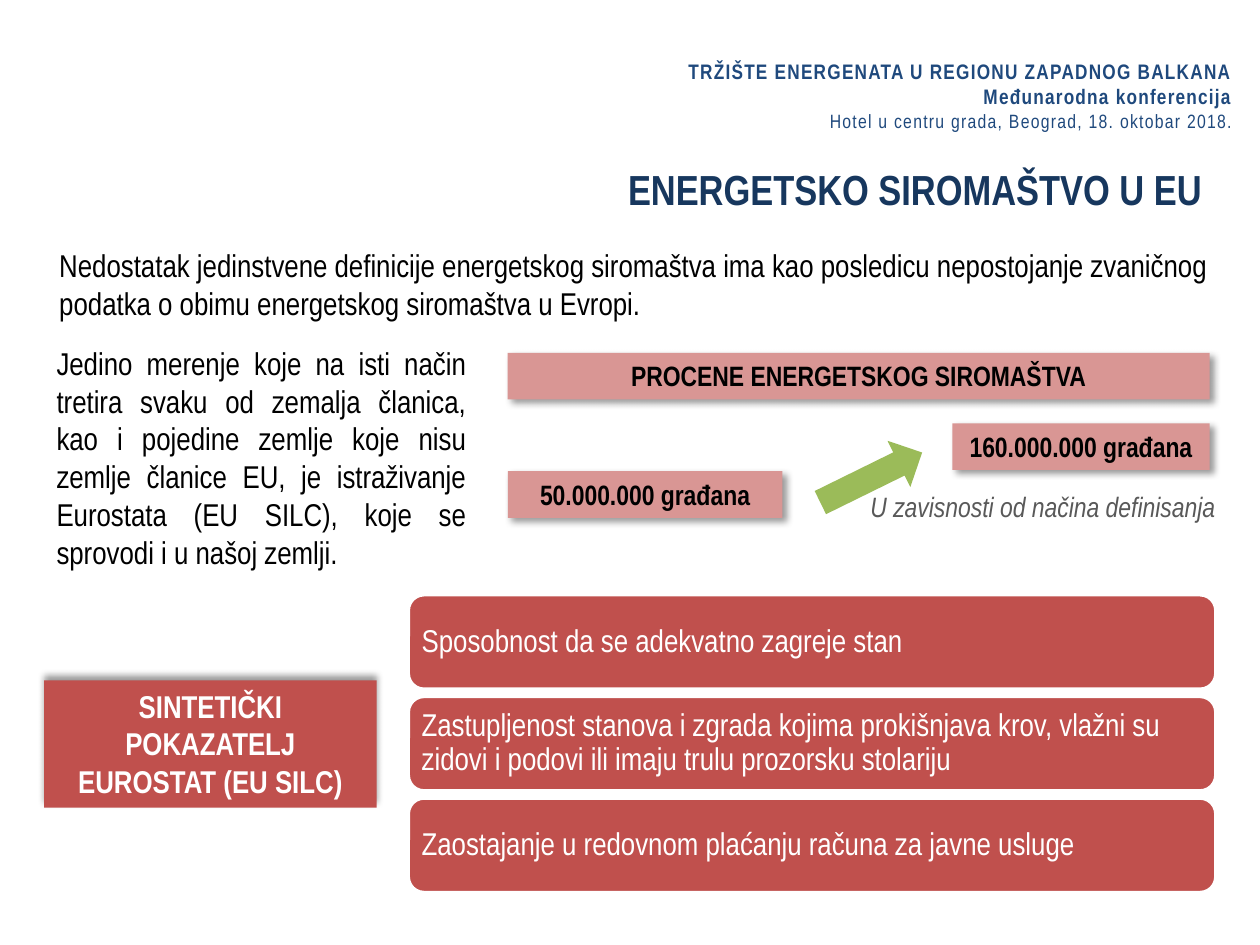
from lxml import etree
from pptx import Presentation
from pptx.dml.color import RGBColor
from pptx.enum.shapes import MSO_SHAPE
from pptx.enum.text import MSO_ANCHOR, MSO_AUTO_SIZE, PP_ALIGN
from pptx.oxml import parse_xml
from pptx.oxml.ns import nsdecls, qn
from pptx.util import Inches, Pt

RECT, ROUND, ARROW = MSO_SHAPE.RECTANGLE, MSO_SHAPE.ROUNDED_RECTANGLE, MSO_SHAPE.DOWN_ARROW
TOP, MID = MSO_ANCHOR.TOP, MSO_ANCHOR.MIDDLE
LEFT, CENTER, RIGHT, JUST = PP_ALIGN.LEFT, PP_ALIGN.CENTER, PP_ALIGN.RIGHT, PP_ALIGN.JUSTIFY
NONE = MSO_AUTO_SIZE.NONE

# Theme: colours and type sizes
THEME = {
    "font": "Arial Narrow",
    "head": "1F497D", "title": "17375E", "text": "000000", "note": "595959",
    "white": "FFFFFF", "red": "C0504D", "pink": "D99694", "green": "9BBB59",
    "big": 24, "body": 18, "label": 16, "event": 12, "place": 11,
}

deck = Presentation()
deck.slide_width, deck.slide_height = Inches(10), Inches(7.5)
COL, ROW = deck.slide_width / 100, deck.slide_height / 75  # square grid
slide = deck.slides.add_slide(deck.slide_layouts[1])
shapes = slide.shapes


def grid(*cells):
    """Turn left, top, width and height in grid units into lengths."""
    return [round(cell * unit) for cell, unit in zip(cells, (COL, ROW, COL, ROW))]


def write(shape, runs, align, anchor=TOP):
    """Fill a shape with runs of (text, size, colour, bold, italic), one a line."""
    frame = shape.text_frame
    frame.word_wrap, frame.auto_size = True, NONE
    frame.vertical_anchor = anchor
    para = frame.paragraphs[0]
    para.alignment = align
    for i, (text, size, color, bold, slant) in enumerate(runs):
        if i:
            para.add_line_break()
        run = para.add_run()
        run.text = text
        font = run.font
        font.name, font.size = THEME["font"], Pt(THEME[size])
        font.bold, font.italic = bold, slant
        font.color.rgb = RGBColor.from_string(THEME[color])
    return para


# Conference header, with wide letter spacing
head = shapes.add_textbox(*grid(47.6, 3.6, 51.2, 7.9))
para = write(head, [
    ("TRŽIŠTE ENERGENATA U REGIONU ZAPADNOG BALKANA", "event", "head", True, False),
    ("Međunarodna konferencija", "event", "head", True, False),
    ("Hotel u centru grada, Beograd, 18. oktobar 2018.", "place", "head", False, False),
], RIGHT, MID)
for run in para.runs:
    run.font._element.set("spc", "70")

# Title and lead text
title = shapes.title
title.left, title.top, title.width, title.height = grid(3.5, 12.2, 92.9, 5.6)
write(title, [("ENERGETSKO SIROMAŠTVO U EU", "big", "title", True, False)], RIGHT, MID)

lead = slide.placeholders[1]
lead.left, lead.top, lead.width, lead.height = grid(3.7, 19, 94.3, 7.9)
para = write(lead, [(
    "Nedostatak jedinstvene definicije energetskog siromaštva ima kao posledicu "
    "nepostojanje zvaničnog podatka o obimu energetskog siromaštva u Evropi.",
    "body", "text", False, False)], LEFT)
para.space_before = Pt(0)
props = para._p.get_or_add_pPr()
props.set("marL", "0")
props.set("indent", "0")
etree.SubElement(props, qn("a:buNone"))

# Text on the survey, and the note under the estimates
for cells, text, size, color, slant in (
    ((3.5, 26.8, 34.5, 19.2),
     "Jedino merenje koje na isti način tretira svaku od zemalja članica, kao i "
     "pojedine zemlje koje nisu zemlje članice EU, je istraživanje Eurostata "
     "(EU SILC), koje se sprovodi i u našoj zemlji.", "body", "text", False),
    ((68.1, 38.4, 29.9, 3.7), "U zavisnosti od načina definisanja",
     "label", "note", True),
):
    box = shapes.add_textbox(*grid(*cells))
    write(box, [(text, size, color, False, slant)], JUST)

# Arrow from the low to the high estimate
arrow = shapes.add_shape(ARROW, *grid(67.1, 33.4, 4.1, 9))
arrow.rotation = 243.8
arrow.shadow.inherit = False
arrow.fill.solid()
arrow.fill.fore_color.rgb = RGBColor.from_string(THEME["green"])
arrow.line.fill.background()

# Shadowed labels: three estimates and the indicator (shadow angle in degrees)
for cells, text, fill, size, color, angle in (
    ((40.3, 28, 55.7, 3.7), "PROCENE ENERGETSKOG SIROMAŠTVA", "pink", "label", "text", 45),
    ((40.3, 37.4, 21.8, 3.7), "50.000.000 građana", "pink", "label", "text", 45),
    ((75.6, 33.6, 20.4, 3.7), "160.000.000 građana", "pink", "label", "text", 45),
    ((3.5, 54, 26.4, 10.1), "SINTETIČKI POKAZATELJ EUROSTAT (EU SILC)",
     "red", "body", "white", 270),
):
    label = shapes.add_shape(RECT, *grid(*cells))
    label.shadow.inherit = False
    label.fill.solid()
    label.fill.fore_color.rgb = RGBColor.from_string(THEME[fill])
    label.line.fill.background()
    label._element.spPr.find(qn("a:effectLst")).append(parse_xml(
        f'<a:outerShdw {nsdecls("a")} blurRad="{Pt(4)}" dist="{Pt(3)}" '
        f'dir="{angle * 60000}" algn="ctr" rotWithShape="0"><a:srgbClr val="000000">'
        '<a:alpha val="40000"/></a:srgbClr></a:outerShdw>'))
    write(label, [(text, size, color, True, False)], CENTER)

# Stack of indicator parts
for i, text in enumerate((
    "Sposobnost da se adekvatno zagreje stan",
    "Zastupljenost stanova i zgrada kojima prokišnjava krov, vlažni su zidovi i "
    "podovi ili imaju trulu prozorsku stolariju",
    "Zaostajanje u redovnom plaćanju računa za javne usluge",
)):
    card = shapes.add_shape(ROUND, *grid(32.4, 47.2 + 8.07 * i, 64.1, 7.5))
    card.shadow.inherit = False
    card.fill.solid()
    card.fill.fore_color.rgb = RGBColor.from_string(THEME["red"])
    card.line.color.rgb = RGBColor.from_string(THEME["white"])
    card.line.width = Pt(2)
    frame = card.text_frame
    frame.margin_left = frame.margin_right = Inches(0.07)
    frame.margin_top = frame.margin_bottom = Inches(0.07)
    para = write(card, [(text, "body", "white", False, False)], LEFT, MID)
    para.line_spacing = 0.9

deck.save("out.pptx")
